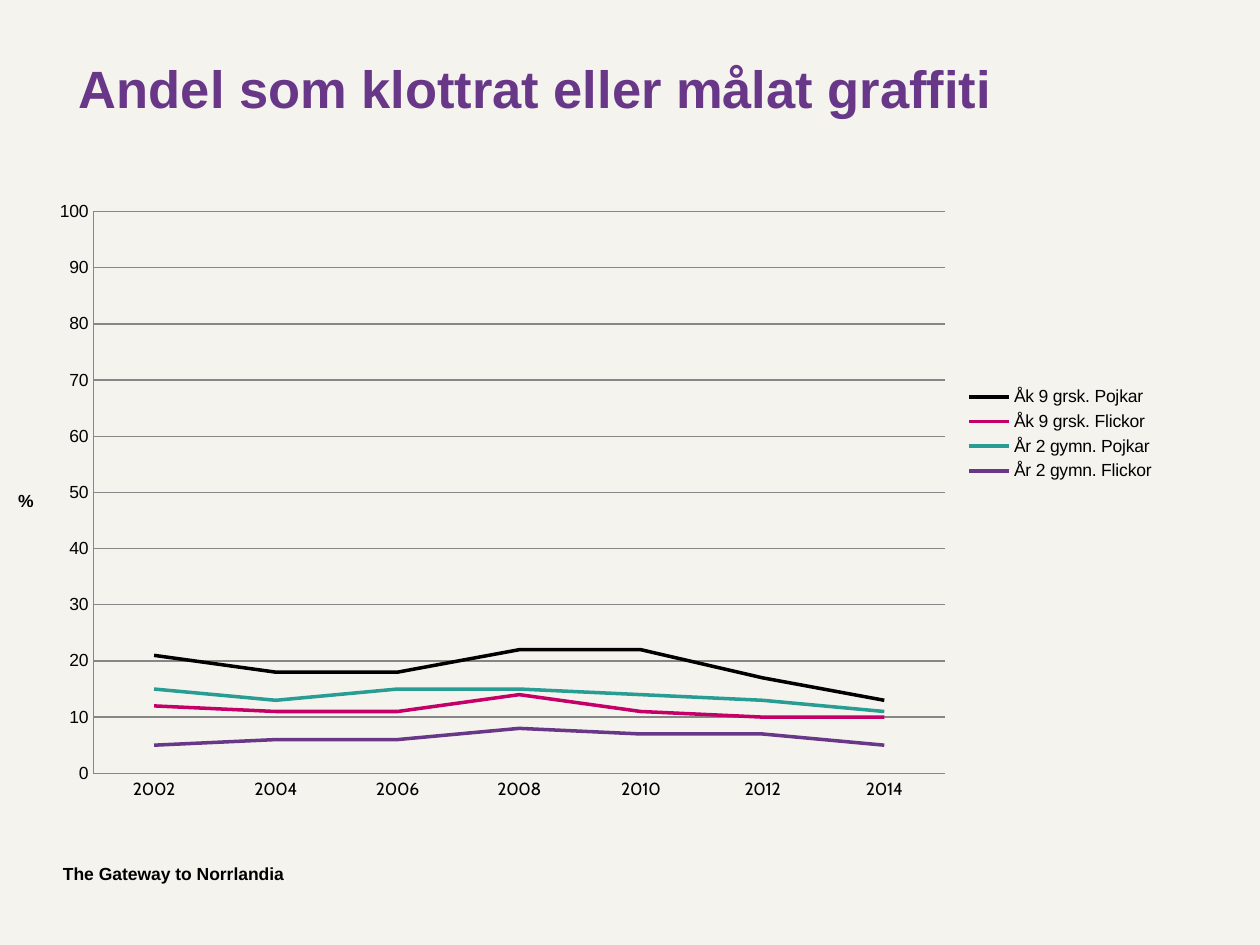
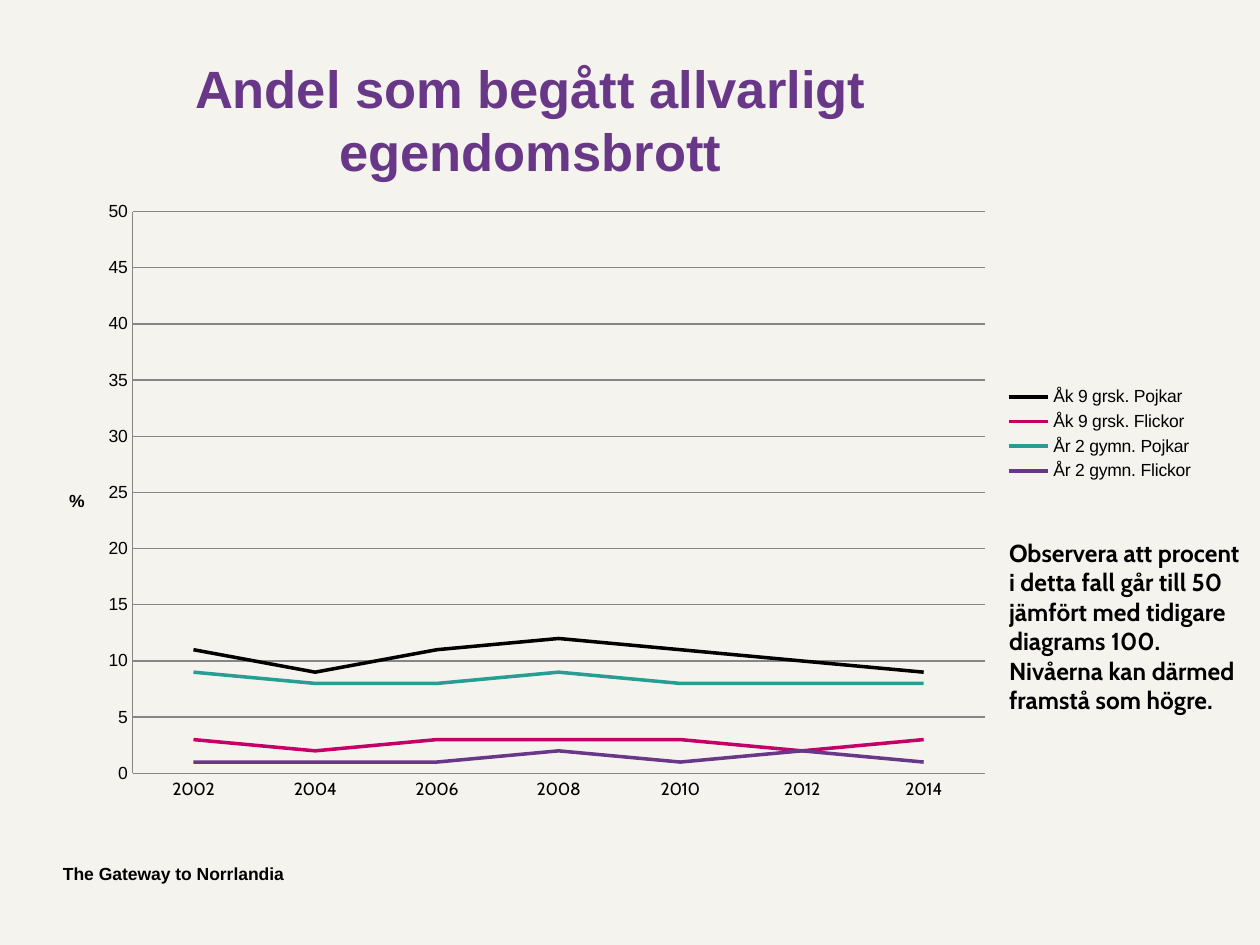
from lxml.etree import SubElement
from pptx import Presentation
from pptx.chart.data import CategoryChartData
from pptx.dml.color import RGBColor
from pptx.enum.chart import XL_CHART_TYPE, XL_LEGEND_POSITION, XL_MARKER_STYLE, XL_TICK_MARK
from pptx.enum.text import MSO_ANCHOR, MSO_AUTO_SIZE, PP_ALIGN
from pptx.oxml import parse_xml
from pptx.oxml.ns import nsdecls, qn
from pptx.util import Pt

BACKGROUND, PURPLE, BLACK, GREY = "F5F3EE", "683788", "000000", "868686"
TOP = 32
FOOTER = "The Gateway to Norrlandia"
YEARS = ["2002", "2004", "2006", "2008", "2010", "2012", "2014"]
GROUPS = {
    "Åk 9 grsk. Pojkar": BLACK,
    "Åk 9 grsk. Flickor": "C40068",
    "År 2 gymn. Pojkar": "289D93",
    "År 2 gymn. Flickor": PURPLE,
}
GRAFFITI = [
    [21, 18, 18, 22, 22, 17, 13],
    [12, 11, 11, 14, 11, 10, 10],
    [15, 13, 15, 15, 14, 13, 11],
    [5, 6, 6, 8, 7, 7, 5],
]
PROPERTY_CRIME = [
    [11, 9, 11, 12, 11, 10, 9],
    [3, 2, 3, 3, 3, 2, 3],
    [9, 8, 8, 9, 8, 8, 8],
    [1, 1, 1, 2, 1, 2, 1],
]
NOTE = ("Observera att procent i detta fall går till 50 jämfört med tidigare "
        "diagrams 100. Nivåerna kan därmed framstå som högre.")
TITLE_FORMAT = {"name": "Arial", "size": Pt(30), "bold": True}
SMALL_BOLD_FORMAT = {"name": "Arial", "size": Pt(10), "bold": True}
NOTE_FORMAT = {"name": "Cabin", "size": Pt(14), "bold": True}


def color(value):
    """Return the colour for a hex string."""
    return RGBColor.from_string(value)


def apply(target, values):
    """Set each attribute of the target from a dict."""
    for name, value in values.items():
        setattr(target, name, value)


def fill_text(box, text, font_values, font_color, margins):
    """Write one formatted paragraph into a box and return it."""
    frame = box.text_frame
    names = ("margin_left", "margin_top", "margin_right", "margin_bottom")
    apply(frame, dict(zip(names, map(Pt, margins))))
    apply(frame, {"word_wrap": True, "auto_size": MSO_AUTO_SIZE.NONE,
                  "vertical_anchor": MSO_ANCHOR.TOP})
    para = frame.paragraphs[0]
    span = para.add_run()
    span.text = text
    apply(span.font, font_values)
    span.font.color.rgb = color(font_color)
    return para


def add_text(page, place, text, font_values, margins):
    """Add a black text box."""
    box = page.shapes.add_textbox(*map(Pt, place))
    fill_text(box, text, font_values, BLACK, margins)


def add_page(deck, title, width, height):
    """Add a page with background, title and footer."""
    page = deck.slides.add_slide(deck.slide_layouts[5])
    page.background.fill.solid()
    page.background.fill.fore_color.rgb = color(BACKGROUND)
    box = page.shapes.title
    apply(box, {"left": Pt(42.5), "top": Pt(TOP), "width": Pt(width), "height": Pt(height)})
    para = fill_text(box, title, TITLE_FORMAT, PURPLE, (0, 0, 0, 0))
    apply(para, {"alignment": PP_ALIGN.CENTER, "line_spacing": Pt(36)})
    add_text(page, (36, 489.6, 205, 19.5), FOOTER, SMALL_BOLD_FORMAT, (0, 3.6, 7.2, 3.6))
    return page


def set_layout(parent, index, values):
    """Give a chart part a fixed place, in fractions of the chart."""
    for old in parent.findall(qn("c:layout")):
        parent.remove(old)
    layout = parse_xml(f"<c:layout {nsdecls('c')}><c:manualLayout/></c:layout>")
    for name, value in values.items():
        SubElement(layout[0], qn(f"c:{name}")).set("val", str(value))
    parent.insert(index, layout)


def format_line(line, line_color, width):
    """Set the colour and width of a line."""
    line.color.rgb = color(line_color)
    line.width = Pt(width)


def format_axis(axis, font_name):
    """Give an axis its grey line and label font."""
    apply(axis, {"major_tick_mark": XL_TICK_MARK.NONE, "minor_tick_mark": XL_TICK_MARK.NONE})
    apply(axis.tick_labels.font, {"name": font_name, "size": Pt(10)})
    axis.tick_labels.font.color.rgb = color(BLACK)
    format_line(axis.format.line, GREY, 0.75)


def add_percent_title(axis, left):
    """Add an upright percent sign beside the value axis."""
    title = axis.axis_title
    title.text_frame.text = "%"
    font = title.text_frame.paragraphs[0].runs[0].font
    apply(font, SMALL_BOLD_FORMAT)
    font.color.rgb = color(BLACK)
    title.text_frame._txBody.bodyPr.set("rot", "0")
    set_layout(title._element, 1, {"xMode": "edge", "yMode": "edge", "x": left, "y": 0.57})


def add_line_chart(page, left, rows, maximum, title_left):
    """Add a line chart of the four groups over the years."""
    data = CategoryChartData()
    data.categories = YEARS
    for name, values in zip(GROUPS, rows):
        data.add_series(name, values)
    chart = page.shapes.add_chart(XL_CHART_TYPE.LINE, Pt(left), Pt(TOP),
                                  Pt(658.8), Pt(432), data).chart
    apply(chart, {"has_title": False, "has_legend": True})
    apply(chart.font, {"name": "Arial", "size": Pt(10)})
    chart.font.color.rgb = color(BLACK)
    apply(chart.legend, {"position": XL_LEGEND_POSITION.RIGHT, "include_in_layout": False})
    chart._chartSpace.find(qn("c:chart")).addnext(parse_xml(
        f"<c:spPr {nsdecls('c', 'a')}><a:noFill/><a:ln><a:noFill/></a:ln></c:spPr>"))
    plot = chart.plots[0]
    plot.vary_by_categories = False
    for series, line_color in zip(plot.series, GROUPS.values()):
        series.smooth = False
        series.marker.style = XL_MARKER_STYLE.NONE
        format_line(series.format.line, line_color, 2)
    format_axis(chart.category_axis, "Cabin")
    axis = chart.value_axis
    format_axis(axis, "Arial")
    apply(axis, {"minimum_scale": 0, "maximum_scale": maximum,
                 "major_unit": maximum / 10, "has_major_gridlines": True})
    format_line(axis.major_gridlines.format.line, GREY, 0.75)
    add_percent_title(axis, title_left)
    set_layout(chart._chartSpace.chart.plotArea, 0, {
        "layoutTarget": "inner", "xMode": "edge", "yMode": "edge",
        "x": 0.068, "y": 0.206, "w": 0.739, "h": 0.743})


def main():
    """Build and save the deck."""
    deck = Presentation()
    apply(deck, {"slide_width": Pt(720), "slide_height": Pt(540)})
    page = add_page(deck, "Andel som klottrat eller målat graffiti", 527, 62.6)
    add_line_chart(page, 8.5, GRAFFITI, 100, 0)
    page = add_page(deck, "Andel som begått allvarligt egendomsbrott", 521.3, 56.9)
    add_text(page, (569.5, 303.8, 150.5, 143.3), NOTE, NOTE_FORMAT, (7.2, 3.6, 7.2, 3.6))
    add_line_chart(page, 31, PROPERTY_CRIME, 50, 0.01)
    deck.save("out.pptx")


if __name__ == "__main__":
    main()
